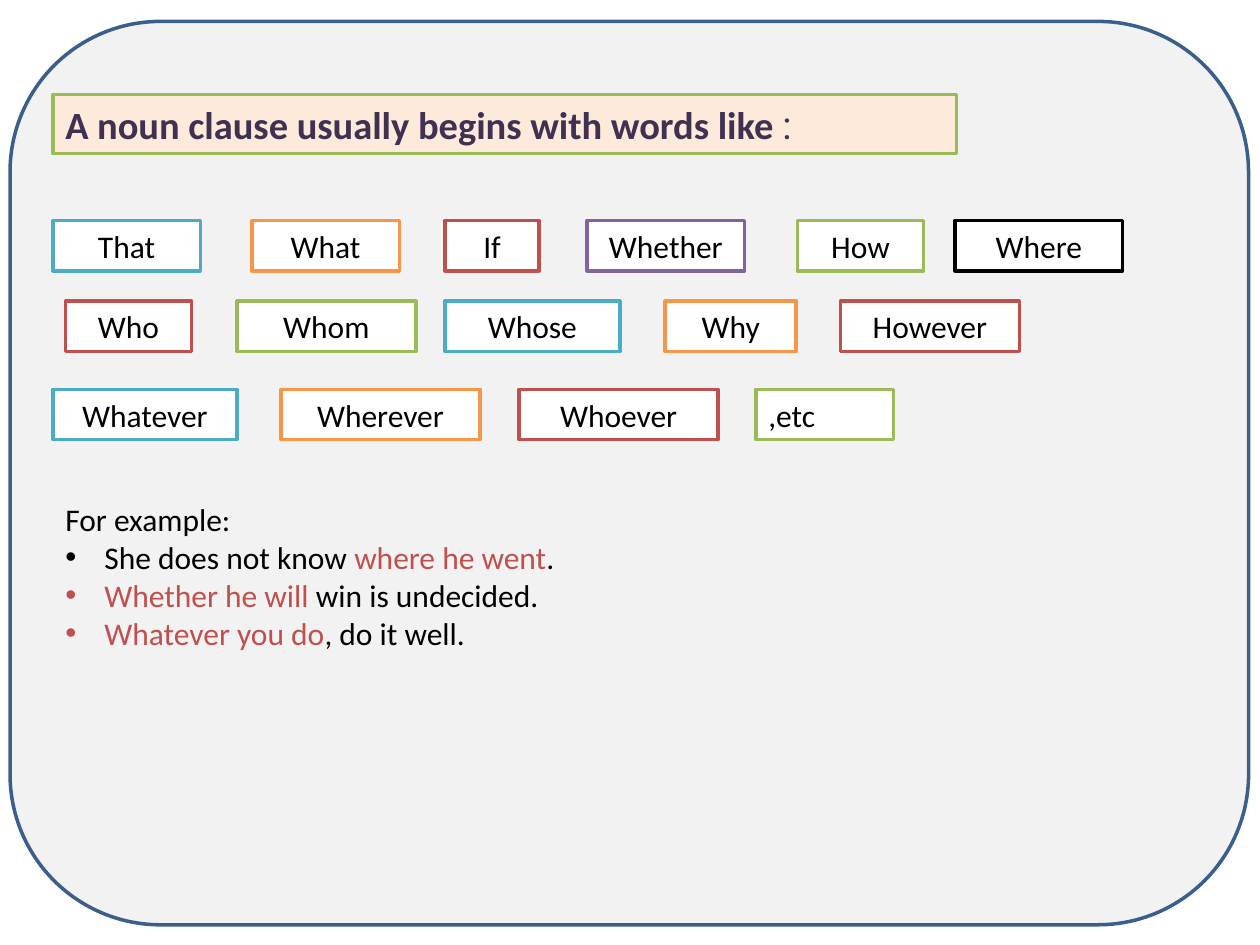
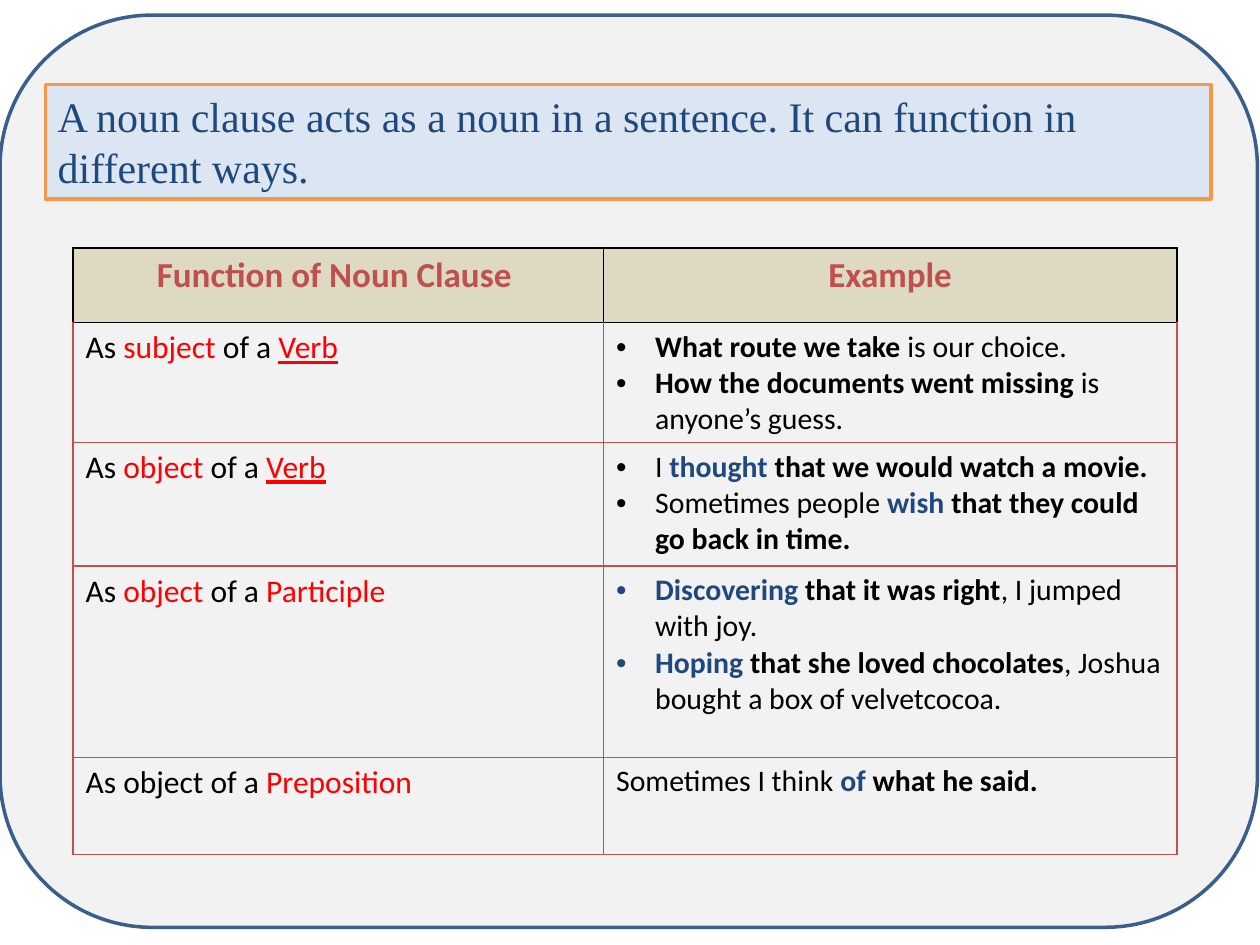
from lxml.etree import SubElement
from pptx import Presentation
from pptx.dml.color import RGBColor
from pptx.enum.shapes import MSO_SHAPE as Shape
from pptx.enum.text import MSO_ANCHOR as Anchor, PP_ALIGN as Align
from pptx.oxml.ns import qn
from pptx.util import Inches, Pt

COLORS = {
    "panel": "F2F2F2", "panel_edge": "3A5F8C", "white": "FFFFFF", "black": "000000",
    "peach": "FDEADA", "pale_blue": "DCE6F2", "sand": "DDD9C3", "plum": "403152",
    "navy": "1F497D", "bright": "FF0000", "teal": "4BACC6", "orange": "F79646",
    "red": "C0504D", "purple": "8064A2", "green": "9BBB59",
}
FONT = "Calibri"
INDENT = 0.31

RED = {"color": "red"}
BRIGHT = {"color": "bright"}
VERB = {"color": "bright", "underline": True}
BOLD = {"bold": True}
NAVY = {"color": "navy", "bold": True}

OPENING = [[("A noun clause usually begins with words like ", BOLD), (":", {"font": "Roboto"})]]
WORD_HEIGHT = 0.4
WORD_ROWS = [
    (1.75, [("That", "teal", 0.42, 1.17), ("What", "orange", 2, 1.17),
            ("If", "red", 3.53, 0.75), ("Whether", "purple", 4.66, 1.25),
            ("How", "green", 6.33, 1), ("Where", "black", 7.58, 1.33)]),
    (2.39, [("Who", "red", 0.52, 1), ("Whom", "green", 1.88, 1.42),
            ("Whose", "teal", 3.53, 1.39), ("Why", "orange", 5.28, 1.04),
            ("However", "red", 6.67, 1.42)]),
    (3.09, [("Whatever", "teal", 0.42, 1.46), ("Wherever", "orange", 2.23, 1.58),
            ("Whoever", "red", 4.12, 1.58), (",etc", "green", 6, 1.09)]),
]
SENTENCES = [
    ["She does not know ", ("where he went", RED), "."],
    [("Whether he will", RED), " win is undecided."],
    [("Whatever you do", RED), ", do it well."],
]

STATEMENT = [["A noun clause acts as a noun in a sentence. It can function in different ways."]]
HEADINGS = ["Function of Noun Clause ", "Example"]
COLUMN_WIDTHS = [4.21, 4.55]
HEADING_HEIGHT = 0.59
FUNCTIONS = [
    (0.95, ["As ", ("subject", BRIGHT), " of a ", ("Verb", VERB)],
     [[("What route we take ", BOLD), "is our choice."],
      [("How the documents went missing ", BOLD), "is anyone’s guess."]]),
    (0.98, ["As ", ("object", BRIGHT), " of a ", ("Verb", VERB)],
     [["I ", ("thought ", NAVY), ("that we would watch a movie.", BOLD)],
      ["Sometimes people ", ("wish ", NAVY), ("that they could go back in time.", BOLD)]]),
    (1.52, ["As ", ("object", BRIGHT), " of a ", ("Participle", BRIGHT)],
     [[("Discovering", NAVY), (" that it was right", BOLD), ", I jumped with joy."],
      [("Hoping ", NAVY), ("that she loved chocolates", BOLD),
       ", Joshua bought a box of velvetcocoa."]]),
    (0.77, ["As object of a ", ("Preposition", BRIGHT)],
     [["Sometimes I think ", ("of", NAVY), (" what he said.", BOLD)]]),
]


def rgb(name):
    return RGBColor.from_string(COLORS[name])


def add_bullet(para):
    props = para._p.get_or_add_pPr()
    props.set("marL", str(Inches(INDENT)))
    props.set("indent", str(-Inches(INDENT)))
    SubElement(props, qn("a:buFont"), typeface="Arial")
    SubElement(props, qn("a:buChar"), char="•")


def write(frame, paragraphs, size=18, color="black", font=FONT, align=Align.LEFT,
          bold=False, bullets_from=None):
    frame.word_wrap = True
    for index, spans in enumerate(paragraphs):
        para = frame.paragraphs[0] if index == 0 else frame.add_paragraph()
        para.alignment = align
        if bullets_from is not None and index >= bullets_from:
            add_bullet(para)
        for span in spans:
            text, style = (span, {}) if isinstance(span, str) else span
            run = para.add_run()
            run.text = text
            run.font.size = Pt(size)
            run.font.name = style.get("font", font)
            run.font.bold = style.get("bold", bold)
            run.font.underline = style.get("underline", False)
            run.font.color.rgb = rgb(style.get("color", color))


def add_box(page, area, fill, line, paragraphs=(), kind=Shape.RECTANGLE, **text_format):
    box = page.shapes.add_shape(kind, *map(Inches, area))
    box.shadow.inherit = False
    box.fill.solid()
    box.fill.fore_color.rgb = rgb(fill)
    box.line.color.rgb = rgb(line)
    box.line.width = Pt(2)
    box.text_frame.vertical_anchor = Anchor.TOP
    write(box.text_frame, paragraphs, **text_format)


def add_page(deck, panel_area):
    page = deck.slides.add_slide(deck.slide_layouts[6])
    add_box(page, panel_area, "panel", "panel_edge", kind=Shape.ROUNDED_RECTANGLE)
    return page


def set_borders(cell, color, top):
    props = cell._tc.get_or_add_tcPr()
    for side, side_color in (("L", color), ("R", color), ("T", top), ("B", color)):
        line = SubElement(props, qn(f"a:ln{side}"), w=str(Pt(1)))
        SubElement(SubElement(line, qn("a:solidFill")), qn("a:srgbClr"), val=COLORS[side_color])


def build_words_page(deck):
    page = add_page(deck, (0.08, 0.17, 9.83, 7.17))
    add_box(page, (0.42, 0.75, 7.17, 0.47), "peach", "green", OPENING, size=22, color="plum")
    for top, words in WORD_ROWS:
        for word, line, left, width in words:
            align = Align.LEFT if word.startswith(",") else Align.CENTER
            add_box(page, (left, top, width, WORD_HEIGHT), "white", line, [[word]], align=align)
    examples = page.shapes.add_textbox(*map(Inches, (0.42, 3.92, 9.08, 1.31)))
    write(examples.text_frame, [["For example:"], *SENTENCES], bullets_from=1)


def build_functions_page(deck):
    page = add_page(deck, (0, 0.12, 9.98, 7.24))
    add_box(page, (0.36, 0.67, 9.25, 0.91), "pale_blue", "orange", STATEMENT,
            size=24, color="navy", font="Times New Roman")
    heights = [HEADING_HEIGHT] + [height for height, *_ in FUNCTIONS]
    area = (0.58, 1.97, sum(COLUMN_WIDTHS), sum(heights))
    table = page.shapes.add_table(len(heights), len(COLUMN_WIDTHS), *map(Inches, area)).table
    table.first_row = table.horz_banding = False
    for column, width in zip(table.columns, COLUMN_WIDTHS):
        column.width = Inches(width)
    for row, height in zip(table.rows, heights):
        row.height = Inches(height)
    for column, heading in enumerate(HEADINGS):
        cell = table.cell(0, column)
        set_borders(cell, "black", "black")
        cell.fill.solid()
        cell.fill.fore_color.rgb = rgb("sand")
        write(cell.text_frame, [[heading]], size=20, color="red", bold=True, align=Align.CENTER)
    for row, (_, function, examples) in enumerate(FUNCTIONS, 1):
        cells = [table.cell(row, column) for column in range(len(HEADINGS))]
        for cell in cells:
            set_borders(cell, "red", "black" if row == 1 else "red")
            cell.fill.background()
        write(cells[0].text_frame, [function])
        write(cells[1].text_frame, examples, size=17,
              bullets_from=0 if len(examples) > 1 else None)


def main():
    deck = Presentation()
    deck.slide_width, deck.slide_height = Inches(10), Inches(7.5)
    build_words_page(deck)
    build_functions_page(deck)
    deck.save("out.pptx")


if __name__ == "__main__":
    main()
